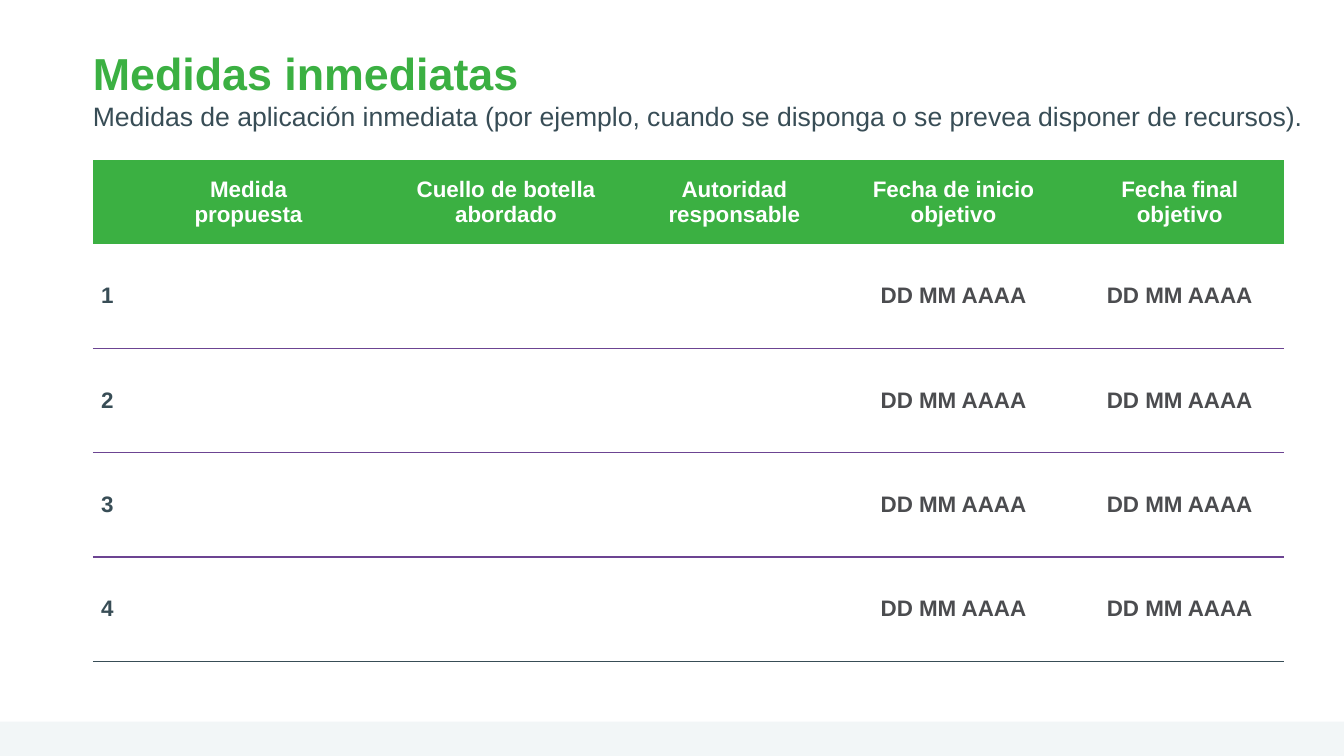
from dataclasses import dataclass

from lxml import etree
from pptx import Presentation
from pptx.dml.color import RGBColor
from pptx.enum import shapes, text
from pptx.oxml.ns import qn
from pptx.util import Pt


@dataclass(frozen=True)
class Theme:
    """Colours, typeface and type sizes of the slide."""
    green: str = "3BB042"
    slate: str = "384D56"
    grey: str = "4B4C4F"
    purple: str = "6C4492"
    white: str = "FFFFFF"
    mist: str = "F2F6F7"
    face: str = "Arial"
    title: float = 32
    subtitle: float = 19
    table: float = 16


THEME = Theme()
PAGE = (960, 540)
TITLE_BOX = (66.3, 28.8, 883.4, 85.7)
TABLE_BOX = (66.3, 114.5, 850.5, 358)
FOOTER_BOX = (0, 515.5, 960, 24.5)

COLUMNS = [
    ("", 20.9),
    ("Medida\vpropuesta", 180.7),
    ("Cuello de botella\nabordado", 187.2),
    ("Autoridad responsable", 138.9),
    ("Fecha de inicio\vobjetivo", 174.2),
    ("Fecha final\vobjetivo", 149),
]
MEASURES = [[str(number), "", "", "", "DD MM AAAA", "DD MM AAAA"] for number in range(1, 5)]
HEADER_HEIGHT = 59.6


def apply(target, values):
    """Set every attribute in values on target."""
    for name, value in values.items():
        setattr(target, name, value)


def style(span, size, colour, bold):
    """Format one run of text."""
    apply(span.font, {"name": THEME.face, "size": Pt(size), "bold": bold})
    span.font.color.rgb = RGBColor.from_string(colour)


def add_heading(page, box):
    """Place the title with its subtitle on the next line."""
    title = page.shapes.title
    apply(title, dict(zip(("left", "top", "width", "height"), map(Pt, box))))
    frame = title.text_frame
    apply(frame, {"margin_left": 0, "margin_right": 0, "margin_top": Pt(4), "margin_bottom": 0,
                  "word_wrap": True, "vertical_anchor": text.MSO_ANCHOR.TOP,
                  "auto_size": text.MSO_AUTO_SIZE.NONE})
    para = frame.paragraphs[0]
    apply(para, {"alignment": text.PP_ALIGN.LEFT, "line_spacing": 1.0, "space_before": Pt(0)})
    span = para.add_run()
    span.text = "Medidas inmediatas"
    style(span, THEME.title, THEME.green, True)
    para.add_line_break()
    span = para.add_run()
    span.text = ("Medidas de aplicación inmediata (por ejemplo, cuando se disponga "
                 "o se prevea disponer de recursos).")
    style(span, THEME.subtitle, THEME.slate, False)


def set_borders(cell, colours):
    """Draw the edges named in colours and clear the others."""
    properties = cell._tc.get_or_add_tcPr()
    for edge in ("lnL", "lnR", "lnT", "lnB"):
        line = etree.SubElement(properties, qn(f"a:{edge}"), w=str(Pt(1)))
        if edge in colours:
            fill = etree.SubElement(line, qn("a:solidFill"))
            etree.SubElement(fill, qn("a:srgbClr"), val=colours[edge])
        else:
            etree.SubElement(line, qn("a:noFill"))


def fill_cell(cell, words, colour, margins):
    """Write centred bold words in a table cell."""
    side, edge = margins
    apply(cell, {"margin_left": Pt(side), "margin_right": Pt(side), "margin_top": Pt(edge),
                 "margin_bottom": Pt(edge), "vertical_anchor": text.MSO_ANCHOR.MIDDLE})
    cell.text_frame.text = words
    for para in cell.text_frame.paragraphs:
        para.alignment = text.PP_ALIGN.CENTER
        for span in para.runs:
            style(span, THEME.table, colour, True)


def add_measures(page, box):
    """Place the table of measures with ruled rows."""
    frame = page.shapes.add_table(len(MEASURES) + 1, len(COLUMNS), *map(Pt, box))
    table = frame.table
    apply(table, {"first_row": False, "horz_banding": False})
    row_height = (box[3] - HEADER_HEIGHT) / len(MEASURES)
    for row in table.rows:
        row.height = Pt(row_height)
    table.rows[0].height = Pt(HEADER_HEIGHT)

    for index, (heading, width) in enumerate(COLUMNS):
        table.columns[index].width = Pt(width)
        cell = table.cell(0, index)
        fill_cell(cell, heading, THEME.white, (5, 0))
        set_borders(cell, {})
        cell.fill.solid()
        cell.fill.fore_color.rgb = RGBColor.from_string(THEME.green)

    for number, measure in enumerate(MEASURES, 1):
        below = THEME.slate if number == len(MEASURES) else THEME.purple
        borders = {"lnB": below}
        if number > 1:
            borders["lnT"] = THEME.purple
        for index, words in enumerate(measure):
            cell = table.cell(number, index)
            fill_cell(cell, words, THEME.grey if index else THEME.slate, (3.6, 3.6))
            set_borders(cell, borders)
            cell.fill.background()


def add_footer(page, box):
    """Place the pale band at the foot of the page."""
    band = page.shapes.add_shape(shapes.MSO_SHAPE.RECTANGLE, *map(Pt, box))
    band.shadow.inherit = False
    band.fill.solid()
    band.fill.fore_color.rgb = RGBColor.from_string(THEME.mist)
    band.line.fill.background()


def main():
    """Build the deck and save it."""
    deck = Presentation()
    apply(deck, dict(zip(("slide_width", "slide_height"), map(Pt, PAGE))))
    page = deck.slides.add_slide(deck.slide_layouts[5])
    add_footer(page, FOOTER_BOX)
    add_heading(page, TITLE_BOX)
    add_measures(page, TABLE_BOX)
    deck.save("out.pptx")


if __name__ == "__main__":
    main()
